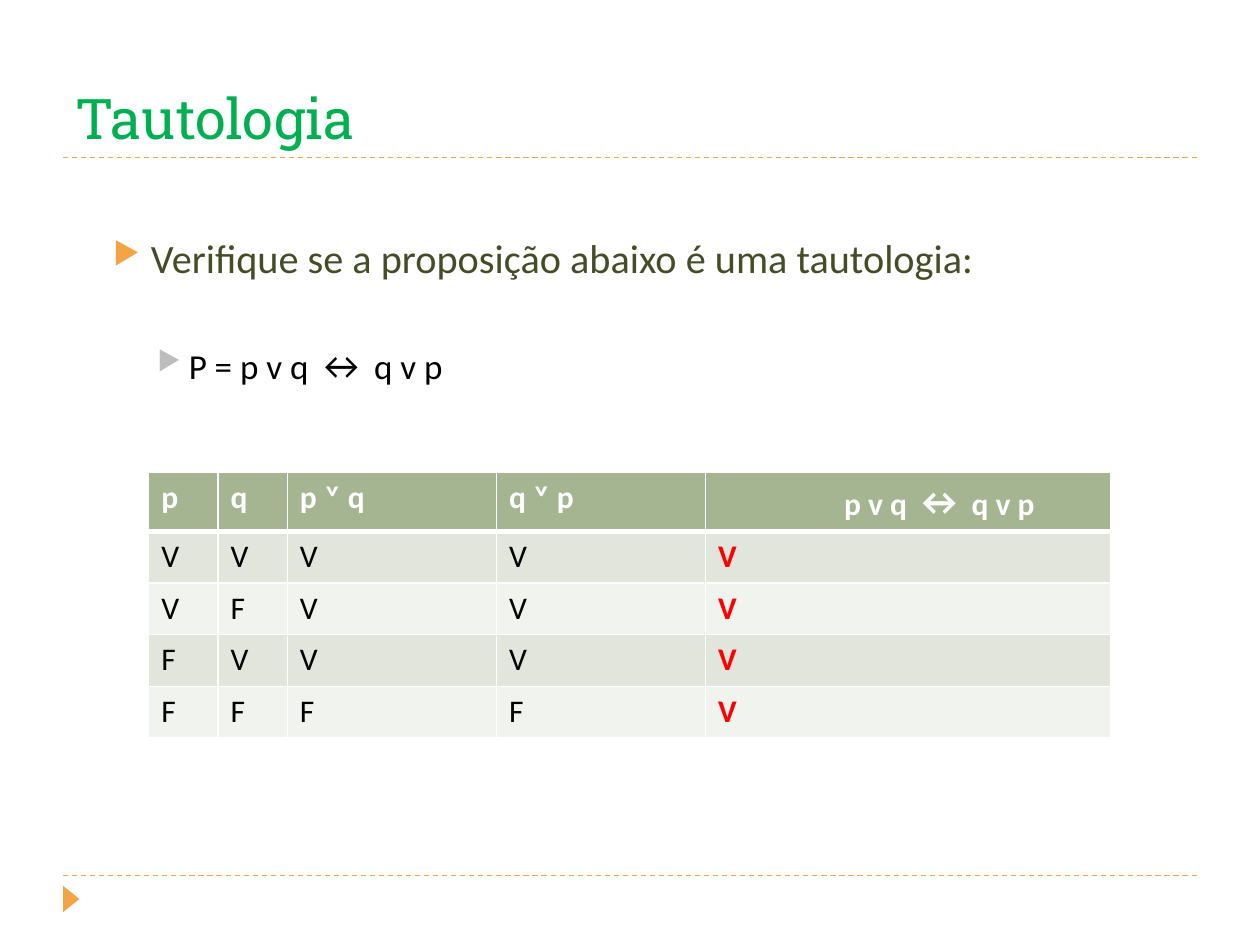
from dataclasses import dataclass

from lxml.etree import SubElement
from pptx import Presentation
from pptx.dml.color import RGBColor
from pptx.enum.dml import MSO_LINE
from pptx.enum.shapes import MSO_CONNECTOR, MSO_SHAPE
from pptx.enum.text import MSO_ANCHOR, PP_ALIGN
from pptx.oxml.ns import qn
from pptx.util import Inches, Pt


@dataclass(frozen=True)
class Theme:
    heading_font: str = "Roboto Slab"
    body_font: str = "Calibri"
    title: str = "00B050"
    accent: str = "F3A447"
    prompt: str = "444D26"
    sub_bullet: str = "BDBDBD"
    black: str = "000000"
    white: str = "FFFFFF"
    result: str = "FF0000"
    header: str = "A5B592"
    bands: tuple = ("E1E5DC", "F0F3EE")
    title_size: int = 32
    prompt_size: int = 23
    formula_size: int = 20
    arrow_size: int = 22
    table_size: int = 18


theme = Theme()


def add_runs(paragraph, texts, size, color, bold=False):
    """Write the texts as runs, with the biconditional arrow a little larger."""
    for text in texts:
        run = paragraph.add_run()
        run.text = text
        run.font.name = theme.body_font
        run.font.size = Pt(theme.arrow_size if text == "↔" else size)
        run.font.bold = bold
        run.font.color.rgb = RGBColor.from_string(color)


def add_border(cell, side, width):
    line = SubElement(cell._tc.get_or_add_tcPr(), qn(f"a:ln{side}"), w=str(Pt(width)))
    fill = SubElement(line, qn("a:solidFill"))
    SubElement(fill, qn("a:srgbClr"), val=theme.white)


prs = Presentation()
prs.slide_width, prs.slide_height = Inches(10), Inches(7.5)
slide = prs.slides.add_slide(prs.slide_layouts[5])

# Dashed rules below the title and above the footer
for y in (6.95, 1.25):
    rule = slide.shapes.add_connector(
        MSO_CONNECTOR.STRAIGHT, Inches(0.5), Inches(y), Inches(9.5), Inches(y))
    rule.line.color.rgb = RGBColor.from_string(theme.accent)
    rule.line.width = Pt(0.75)
    rule.line.dash_style = MSO_LINE.DASH
    SubElement(rule._element.spPr, qn("a:effectLst"))

# Footer marker
marker = slide.shapes.add_shape(
    MSO_SHAPE.ISOSCELES_TRIANGLE, Inches(0.46), Inches(7.07), Inches(0.21), Inches(0.13))
marker.rotation = 90
marker.shadow.inherit = False
marker.fill.solid()
marker.fill.fore_color.rgb = RGBColor.from_string(theme.accent)
marker.line.fill.background()

# Title
title = slide.shapes.title
title.left, title.top, title.width, title.height = map(Inches, (0.5, 0.17, 9, 1.08))
title.text_frame.text = "Tautologia"
title.text_frame.vertical_anchor = MSO_ANCHOR.BOTTOM
heading = title.text_frame.paragraphs[0]
heading.alignment = PP_ALIGN.LEFT
heading.runs[0].font.name = theme.heading_font
heading.runs[0].font.size = Pt(theme.title_size)
heading.runs[0].font.color.rgb = RGBColor.from_string(theme.title)

# Exercise: prompt and proposition
exercise = slide.shapes.add_textbox(Inches(0.5), Inches(1.8), Inches(9), Inches(1.5)).text_frame
exercise.word_wrap = True
exercise_lines = [
    # texts, level, margin, indent, space before, size, colour, bullet colour
    (["Verifique se a proposição abaixo é uma tautologia:"],
     1, 0.6, -0.3, 0, theme.prompt_size, theme.prompt, theme.accent),
    (["P = p v q ", "↔", " q v p"],
     2, 0.9, -0.25, 34.4, theme.formula_size, theme.black, theme.sub_bullet),
]
for i, (texts, level, margin, indent, before, size, color, bullet) in enumerate(exercise_lines):
    paragraph = exercise.add_paragraph() if i else exercise.paragraphs[0]
    props = paragraph._p.get_or_add_pPr()
    props.set("marL", str(Inches(margin)))
    props.set("indent", str(Inches(indent)))
    SubElement(SubElement(props, qn("a:buClr")), qn("a:srgbClr"), val=bullet)
    SubElement(props, qn("a:buSzPct"), val="76000")
    SubElement(props, qn("a:buChar"), char="▶")
    paragraph.level = level
    paragraph.alignment = PP_ALIGN.JUSTIFY
    paragraph.space_before = Pt(before)
    add_runs(paragraph, texts, size, color)

# Truth table
truth_rows = [
    [["p"], ["q"], ["p ˅ q"], ["q ˅ p"], ["p v q ", "↔", " q v p"]],
    "VVVVV",
    "VFVVV",
    "FVVVV",
    "FFFFV",
]
column_widths = (0.55, 0.55, 1.66, 1.66, 3.22)
row_heights = (0.46, 0.41, 0.41, 0.41, 0.41)
truth_table = slide.shapes.add_table(
    len(row_heights), len(column_widths), Inches(1.18), Inches(3.75),
    Inches(sum(column_widths)), Inches(sum(row_heights))).table
for column, width in zip(truth_table.columns, column_widths):
    column.width = Inches(width)
for row, height in zip(truth_table.rows, row_heights):
    row.height = Inches(height)

last_column = len(column_widths) - 1
for r, values in enumerate(truth_rows):
    for c, texts in enumerate(values):
        cell = truth_table.cell(r, c)
        is_header, is_result = r == 0, c == last_column
        for side in "LRTB":
            heavy = (side == "B" and r == 0) or (side == "T" and r == 1)
            add_border(cell, side, 3 if heavy else 1)
        cell.fill.solid()
        cell.fill.fore_color.rgb = RGBColor.from_string(
            theme.header if is_header else theme.bands[(r - 1) % 2])
        color = theme.white if is_header else theme.result if is_result else theme.black
        paragraph = cell.text_frame.paragraphs[0]
        if is_header and is_result:
            paragraph.level = 2
            paragraph.alignment = PP_ALIGN.JUSTIFY
            paragraph._p.get_or_add_pPr().set("marL", str(Inches(1)))
        add_runs(paragraph, texts, theme.table_size, color, bold=is_header or is_result)

prs.save("out.pptx")
